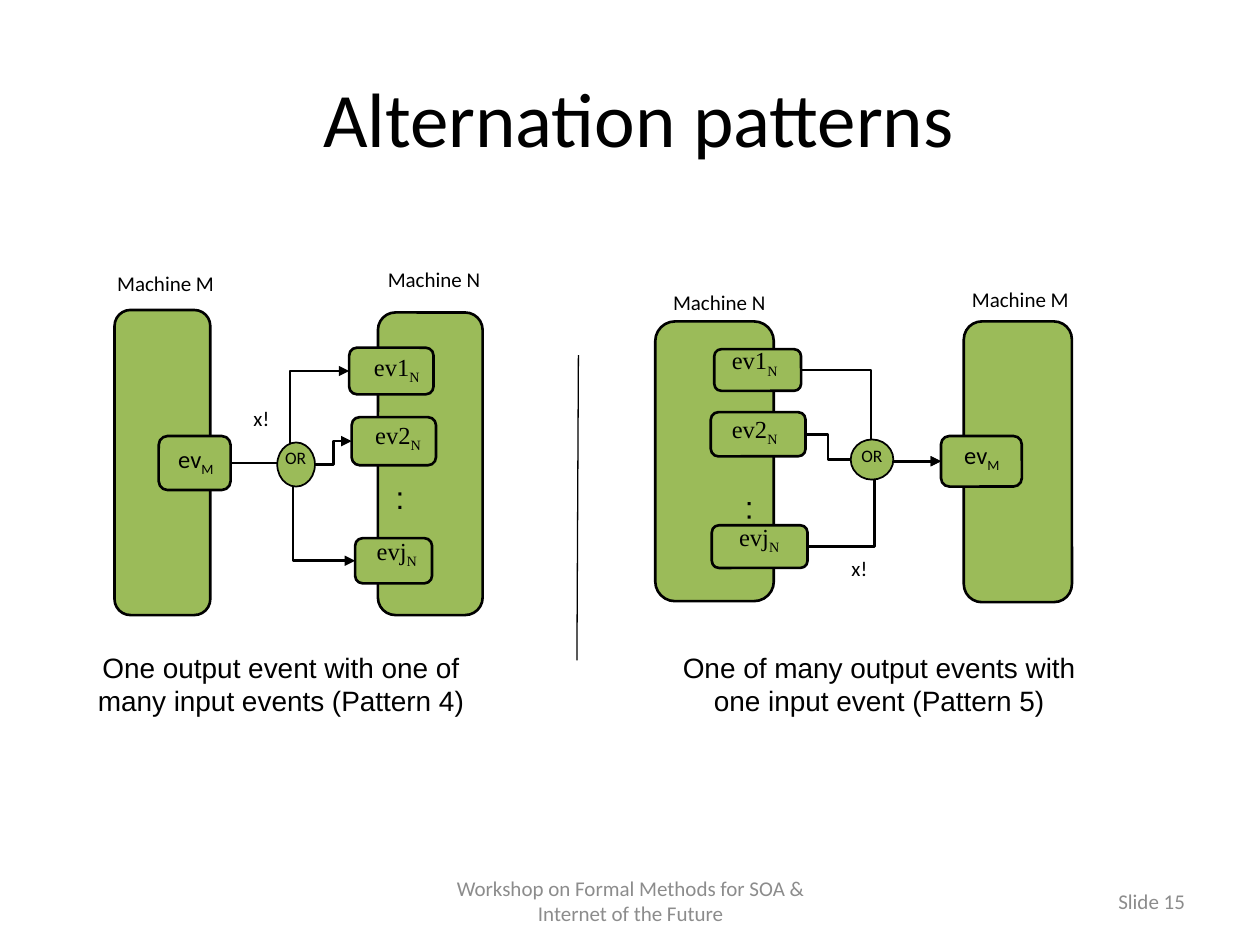
from dataclasses import dataclass

from lxml.etree import SubElement
from pptx import Presentation
from pptx.dml.color import RGBColor
from pptx.enum.shapes import MSO_CONNECTOR, MSO_SHAPE
from pptx.enum.text import MSO_ANCHOR, PP_ALIGN
from pptx.oxml.ns import qn
from pptx.util import Cm, Pt


@dataclass(frozen=True)
class Theme:
    ink: RGBColor = RGBColor(0, 0, 0)
    green: RGBColor = RGBColor(0x9B, 0xBB, 0x59)
    grey: RGBColor = RGBColor(0x8C, 0x8C, 0x8C)
    sans: str = "Calibri"
    serif: str = "Times New Roman"
    plain: str = "Arial"
    title: int = 44
    dots: int = 18
    caption: int = 16
    event: int = 14
    label: int = 12
    gate: int = 10
    outline: float = 1.5
    gate_outline: float = 1
    divider: float = 0.75


THEME = Theme()
DEFAULT_INSETS = (0.25, 0.13)
SMALL_INSETS = (0.1, 0.05)
EVEN_INSETS = (0.1, 0.1)
NO_INSETS = (0, 0)

# All boxes are (left, top, width, height) in centimetres.
TITLE = (" Alternation patterns", (1.27, 0.76, 22.86, 3.18))
FOOTER = ("Workshop on Formal Methods for SOA & Internet of the Future",
          (8.69, 17.65, 8.05, 1.02))
SLIDE_NUMBER = ("Slide 15", (18.21, 17.65, 5.93, 1.02))
DIVIDER = ((11.66, 7.16), (11.63, 13.31))

# Events: name, subscript, box, label box. "M" is the single event, "N" the alternatives.
PATTERNS = [
    {
        "caption": ("One output event with one of many input events (Pattern 4)",
                    (1.07, 12.98, 9.19, 1.63)),
        "machines": [(7.62, 6.30, 2.11, 6.10), (2.31, 6.25, 1.93, 6.15)],
        "machine_m": (1.93, 5.41, 2.82, 0.79),
        "machine_n": (7.34, 5.28, 2.82, 0.91),
        "single": ("ev", "M", (3.20, 8.79, 1.45, 1.09), (3.33, 8.84, 1.24, 0.89)),
        "alternatives": [
            ("ev1", "N", (7.04, 7.01, 1.70, 0.94), (7.24, 6.99, 1.52, 0.89)),
            ("ev2", "N", (7.09, 8.41, 1.70, 0.97), (7.29, 8.36, 1.47, 0.89)),
            ("evj", "N", (7.16, 10.85, 1.55, 0.91), (7.34, 10.69, 1.32, 0.89)),
        ],
        "condition": (4.85, 8.13, 0.84, 0.79),
        "gate": (5.59, 8.92, 0.76, 0.89),
        "gate_label": (5.54, 9.02, 0.84, 0.53),
        "dots": (7.72, 9.50, 0.69, 1.30),
        "dots_turn": 0,
        "splits": True,
    },
    {
        "caption": ("One of many output events with one input event (Pattern 5)",
                    (13.13, 12.98, 9.19, 1.63)),
        "machines": [(13.21, 6.48, 2.39, 5.64), (19.43, 6.48, 2.18, 5.66)],
        "machine_m": (18.97, 5.72, 3.20, 0.74),
        "machine_n": (12.90, 5.74, 3.20, 0.86),
        "single": ("ev", "M", (18.97, 8.79, 1.63, 1.02), (19.20, 8.79, 1.19, 0.84)),
        "alternatives": [
            ("ev1", "N", (14.40, 7.04, 1.75, 0.84), (14.40, 6.88, 1.63, 0.84)),
            ("ev2", "N", (14.33, 8.31, 1.91, 0.89), (14.43, 8.26, 1.57, 0.84)),
            ("evj", "N", (14.35, 10.59, 1.93, 0.86), (14.58, 10.44, 1.45, 0.84)),
        ],
        "condition": (16.84, 11.15, 0.97, 0.74),
        "gate": (17.15, 8.86, 0.86, 0.81),
        "gate_label": (17.09, 8.97, 0.97, 0.51),
        "dots": (14.71, 9.68, 0.79, 1.22),
        "dots_turn": 180,
        "splits": False,
    },
]

# Connection sites of an event box.
BOX_LEFT, BOX_RIGHT = 1, 3


def cm(values):
    return [Cm(value) for value in values]


def add_text(slide, text, box, size, font=THEME.sans, color=THEME.ink, subscript="",
             align=PP_ALIGN.CENTER, anchor=MSO_ANCHOR.TOP, insets=DEFAULT_INSETS):
    label = slide.shapes.add_textbox(*cm(box))
    frame = label.text_frame
    frame.word_wrap = True
    frame.vertical_anchor = anchor
    frame.margin_left = frame.margin_right = Cm(insets[0])
    frame.margin_top = frame.margin_bottom = Cm(insets[1])
    frame.text = text
    paragraph = frame.paragraphs[0]
    paragraph.alignment = align
    if subscript:
        lowered = paragraph.add_run()
        lowered.text = subscript
        lowered.font._element.set("baseline", "-25000")
    for run in paragraph.runs:
        run.font.name = font
        run.font.size = Pt(size)
        run.font.color.rgb = color
    return label


def add_block(slide, kind, box, width=THEME.outline):
    block = slide.shapes.add_shape(kind, *cm(box))
    block.shadow.inherit = False
    block.fill.solid()
    block.fill.fore_color.rgb = THEME.green
    block.line.color.rgb = THEME.ink
    block.line.width = Pt(width)
    return block


def add_line(slide, kind, width, start, end):
    line = slide.shapes.add_connector(kind, *cm(start + end))
    line.line.color.rgb = THEME.ink
    line.line.width = Pt(width)
    SubElement(line._element.spPr, qn("a:effectLst"))
    return line


def add_flow(slide, source=None, target=None, gate_point=(0, 0), arrow=True):
    """Link two event boxes; a missing end stays at the gate point."""
    flow = add_line(slide, MSO_CONNECTOR.ELBOW, THEME.outline, gate_point, gate_point)
    if source is not None:
        flow.begin_connect(source, BOX_RIGHT)
    if target is not None:
        flow.end_connect(target, BOX_LEFT)
    if arrow:
        SubElement(flow.line._get_or_add_ln(), qn("a:tailEnd"), type="triangle")


def add_event_label(slide, event, font):
    name, subscript, _, box = event
    add_text(slide, name, box, THEME.event, font, subscript=subscript,
             anchor=MSO_ANCHOR.MIDDLE, insets=SMALL_INSETS)


def add_pattern(slide, pattern):
    for machine in pattern["machines"]:
        add_block(slide, MSO_SHAPE.ROUNDED_RECTANGLE, machine)
    single, first, middle, last = [
        add_block(slide, MSO_SHAPE.ROUNDED_RECTANGLE, event[2])
        for event in [pattern["single"], *pattern["alternatives"]]]

    for event in (first, last):
        source, target = (single, event) if pattern["splits"] else (event, single)
        add_flow(slide, source, target)
    add_block(slide, MSO_SHAPE.OVAL, pattern["gate"], THEME.gate_outline)
    left, top, width, height = pattern["gate"]
    center = top + height / 2
    if pattern["splits"]:
        add_flow(slide, target=middle, gate_point=(left + width, center))
    else:
        add_flow(slide, source=middle, gate_point=(left, center), arrow=False)

    add_event_label(slide, pattern["single"], THEME.sans)
    for event in pattern["alternatives"]:
        add_event_label(slide, event, THEME.serif)
    add_text(slide, "Machine M", pattern["machine_m"], THEME.label, insets=SMALL_INSETS)
    add_text(slide, "Machine N", pattern["machine_n"], THEME.label, insets=EVEN_INSETS)
    add_text(slide, "x!", pattern["condition"], THEME.label, insets=SMALL_INSETS)
    add_text(slide, "OR", pattern["gate_label"], THEME.gate, insets=NO_INSETS)
    dots = add_text(slide, ":", pattern["dots"], THEME.dots, THEME.plain)
    dots.rotation = pattern["dots_turn"]
    add_text(slide, *pattern["caption"], THEME.caption, THEME.plain)


def main():
    deck = Presentation()
    deck.slide_width, deck.slide_height = Cm(25.4), Cm(19.05)
    slide = deck.slides.add_slide(deck.slide_layouts[6])
    add_text(slide, *TITLE, THEME.title, anchor=MSO_ANCHOR.MIDDLE)
    for pattern in PATTERNS:
        add_pattern(slide, pattern)
    add_line(slide, MSO_CONNECTOR.STRAIGHT, THEME.divider, *DIVIDER)
    for (text, box), align in ((FOOTER, PP_ALIGN.CENTER), (SLIDE_NUMBER, PP_ALIGN.RIGHT)):
        add_text(slide, text, box, THEME.label, color=THEME.grey, align=align,
                 anchor=MSO_ANCHOR.MIDDLE)
    deck.save("out.pptx")


if __name__ == "__main__":
    main()
